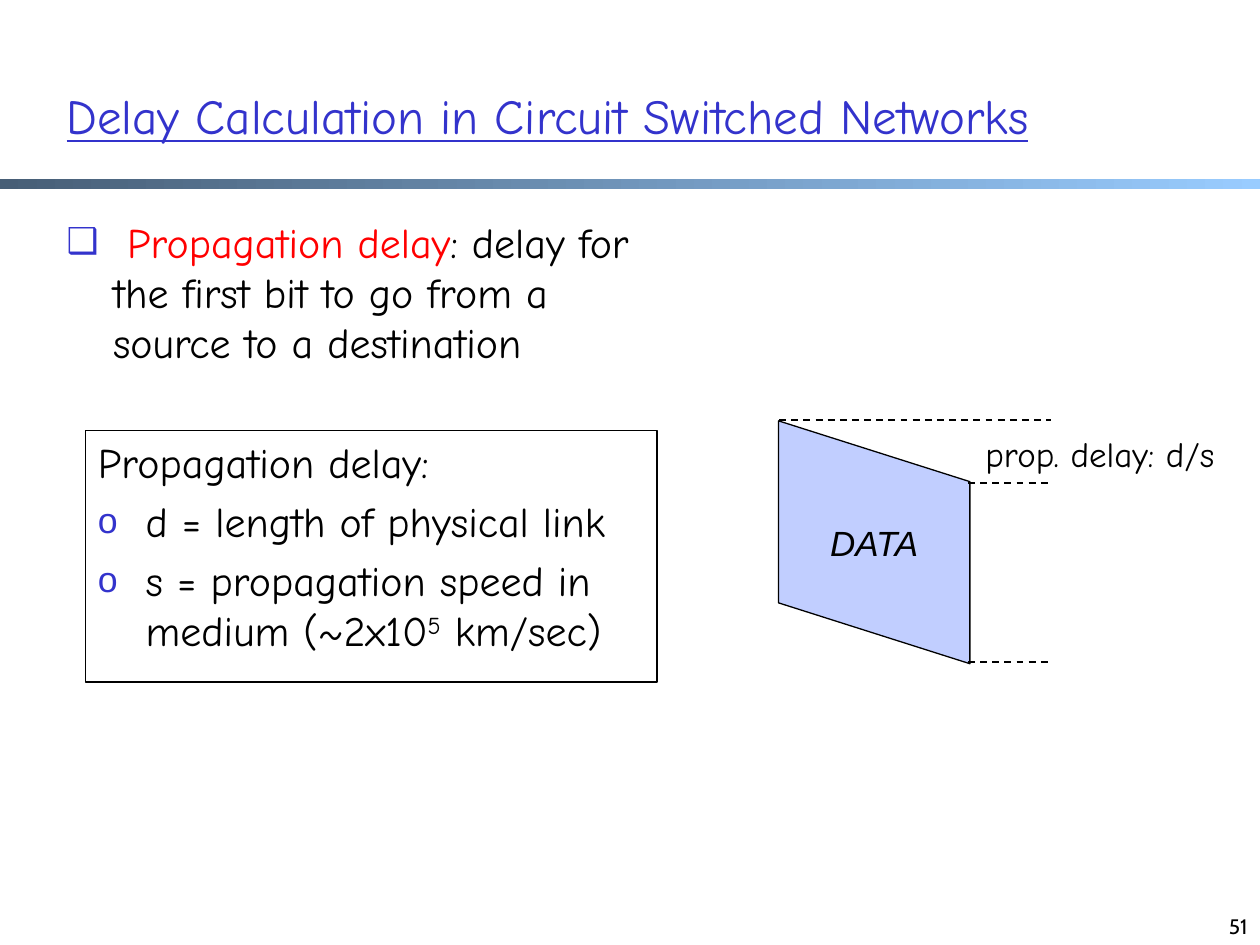
from dataclasses import dataclass
from typing import Optional

from lxml.etree import SubElement
from pptx import Presentation
from pptx.dml.color import RGBColor
from pptx.enum.dml import MSO_LINE_DASH_STYLE as DASH
from pptx.enum.shapes import MSO_CONNECTOR, MSO_SHAPE
from pptx.enum.text import MSO_ANCHOR as ANCHOR, PP_ALIGN as ALIGN
from pptx.oxml.ns import qn
from pptx.util import Inches, Pt

BLACK, BLUE, RED, LILAC = "000000", "3333CC", "FF0000", "C1CEFF"
BAR_START, BAR_END = "475E76", "99CCFF"
COMIC, CABIN, ARIAL = "Comic Neue", "Cabin", "Arial"


@dataclass
class Run:
    text: str
    color: Optional[str] = None
    raised: bool = False


@dataclass
class Line:
    runs: list[Run]
    bullet: str = ""
    hanging: float = 0
    before: float = 0


@dataclass
class Style:
    size: float = 24
    font: str = COMIC
    color: str = BLACK
    underline: bool = False
    italic: bool = False
    align: ALIGN = ALIGN.LEFT
    anchor: ANCHOR = ANCHOR.TOP
    wrap: bool = True


@dataclass
class TextBox:
    box: tuple[float, float, float, float]
    lines: list[Line]
    style: Style


@dataclass
class Guide:
    left: float
    right: float
    top: float


def rgb(value: str) -> RGBColor:
    return RGBColor.from_string(value)


def add_bullet(paragraph, character: str) -> None:
    properties = paragraph._p.get_or_add_pPr()
    color = SubElement(properties, qn("a:buClr"))
    SubElement(color, qn("a:srgbClr"), val=BLUE)
    SubElement(properties, qn("a:buSzPct"), val="85000")
    SubElement(properties, qn("a:buFont"), typeface=ARIAL)
    SubElement(properties, qn("a:buChar"), char=character)


def write_text(shape, lines: list[Line], style: Style) -> None:
    frame = shape.text_frame
    frame.word_wrap = style.wrap
    frame.vertical_anchor = style.anchor
    for index, line in enumerate(lines):
        paragraph = frame.add_paragraph() if index else frame.paragraphs[0]
        paragraph.alignment = style.align
        if line.before:
            paragraph.space_before = Pt(line.before)
        if line.hanging:
            properties = paragraph._p.get_or_add_pPr()
            properties.set("marL", str(Inches(line.hanging)))
            properties.set("indent", str(-Inches(line.hanging)))
        if line.bullet:
            add_bullet(paragraph, line.bullet)
        font = paragraph.font
        font.size, font.name = Pt(style.size), style.font
        font.underline, font.italic = style.underline, style.italic
        font.color.rgb = rgb(style.color)
        for item in line.runs:
            run = paragraph.add_run()
            run.text = item.text
            if item.color:
                run.font.color.rgb = rgb(item.color)
            if item.raised:
                run.font._element.set("baseline", "30000")


def add_text(slide, item: TextBox):
    shape = slide.shapes.add_textbox(*map(Inches, item.box))
    write_text(shape, item.lines, item.style)
    return shape


def outline(shape) -> None:
    shape.line.color.rgb = rgb(BLACK)
    shape.line.width = Pt(0.75)


def add_bar(slide) -> None:
    bar = slide.shapes.add_shape(
        MSO_SHAPE.RECTANGLE, *map(Inches, (0, 1.42, 10.01, 0.08)))
    bar.shadow.inherit = False
    bar.line.fill.background()
    bar.fill.gradient()
    bar.fill.gradient_angle = 0
    for stop, color in zip(bar.fill.gradient_stops, (BAR_START, BAR_END)):
        stop.color.rgb = rgb(color)


def add_data_block(slide) -> None:
    block = slide.shapes.add_shape(
        MSO_SHAPE.PARALLELOGRAM, *map(Inches, (5.98, 3.55, 1.93, 1.52)))
    block.rotation = 90
    block.adjustments[0] = 0.318
    block.shadow.inherit = False
    block.fill.solid()
    block.fill.fore_color.rgb = rgb(LILAC)
    outline(block)
    write_text(block, [Line([Run("DATA")])],
               Style(20, ARIAL, italic=True, align=ALIGN.CENTER,
                     anchor=ANCHOR.MIDDLE, wrap=False))
    # Turn the text back upright
    block.text_frame._txBody.bodyPr.set("vert", "vert270")


def add_guide(slide, guide: Guide) -> None:
    connector = slide.shapes.add_connector(
        MSO_CONNECTOR.STRAIGHT, Inches(guide.left), Inches(guide.top),
        Inches(guide.right), Inches(guide.top))
    connector.line.color.rgb = rgb(BLACK)
    connector.line.width = Pt(1)
    connector.line.dash_style = DASH.DASH
    SubElement(connector._element.spPr, qn("a:effectLst"))


TITLE = TextBox(
    (0.43, 0.29, 8.98, 1.25),
    [Line([Run("Delay Calculation in Circuit Switched Networks")])],
    Style(28, color=BLUE, underline=True, anchor=ANCHOR.MIDDLE))
DEFINITION = TextBox(
    (0.43, 1.67, 4.91, 1.31),
    [Line([Run(" Propagation delay", RED),
           Run(": delay for the first bit to go from a source to a destination")],
          "❑", 0.37)],
    Style())
FORMULA = TextBox(
    (0.68, 3.42, 4.54, 2),
    [Line([Run("Propagation delay:")], hanging=0.38),
     Line([Run("d = length of physical link")], "o", 0.38, 5),
     Line([Run("s = propagation speed in medium (~2x10"),
           Run("5", raised=True), Run(" km/sec)")], "o", 0.38, 5)],
    Style())
DELAY_LABEL = TextBox((7.73, 3.39, 2.23, 0.44),
                      [Line([Run("prop. delay: d/s")])],
                      Style(20, wrap=False))
PAGE_NUMBER = TextBox((7.68, 7.01, 2.33, 0.5), [Line([Run("51")])],
                      Style(12, CABIN, align=ALIGN.RIGHT, anchor=ANCHOR.BOTTOM))
GUIDES = [Guide(6.19, 8.35, 3.34), Guide(7.69, 8.35, 3.84),
          Guide(7.69, 8.35, 5.26)]


def main() -> None:
    presentation = Presentation()
    presentation.slide_width = Inches(10.01)
    presentation.slide_height = Inches(7.51)
    slide = presentation.slides.add_slide(presentation.slide_layouts[6])

    # Heading and page number
    add_bar(slide)
    add_text(slide, PAGE_NUMBER)
    add_text(slide, TITLE)

    # Definition and framed formula terms
    outline(add_text(slide, FORMULA))
    add_text(slide, DEFINITION)

    # Timing diagram
    add_data_block(slide)
    for guide in GUIDES:
        add_guide(slide, guide)
    add_text(slide, DELAY_LABEL)

    presentation.save("out.pptx")


if __name__ == "__main__":
    main()
